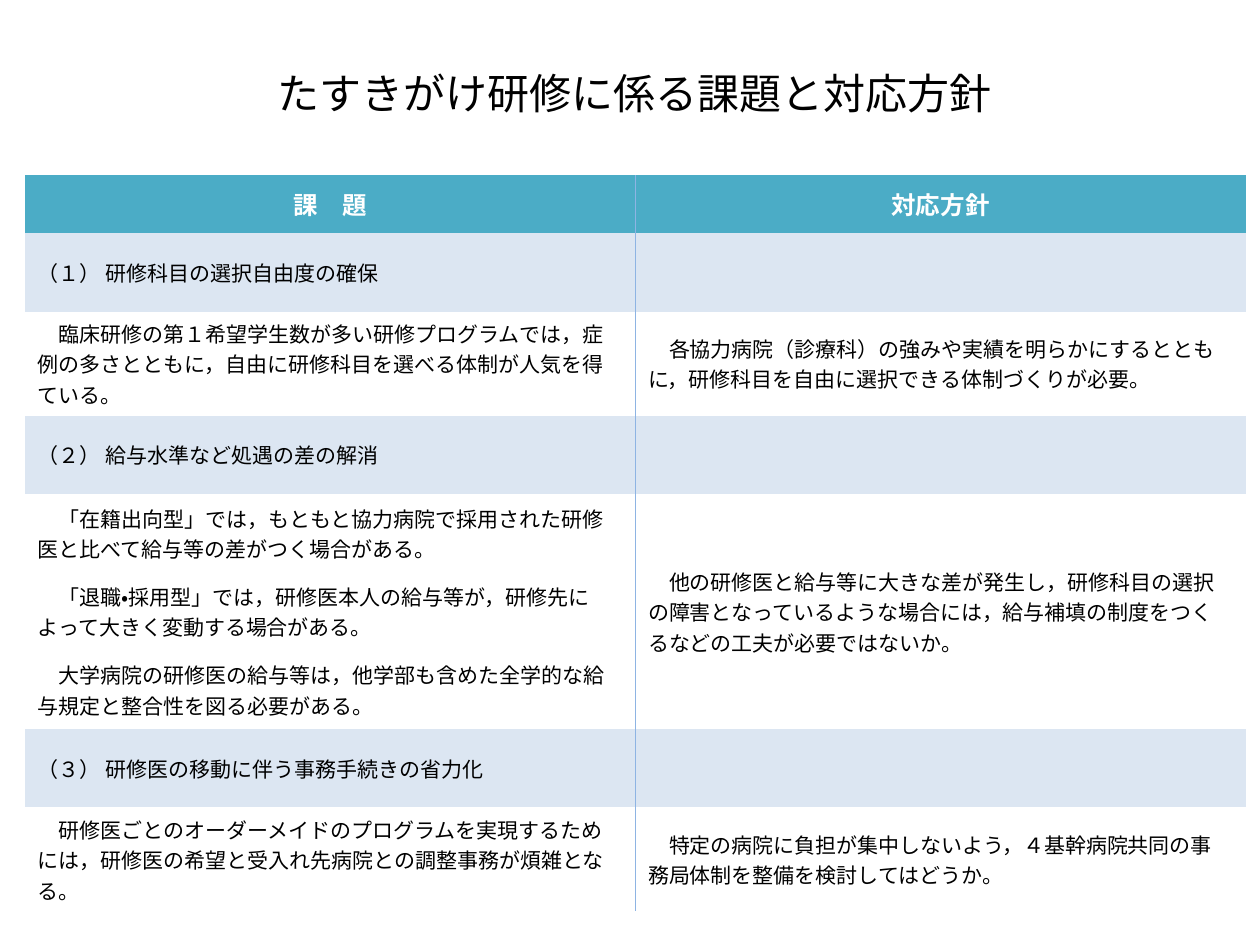
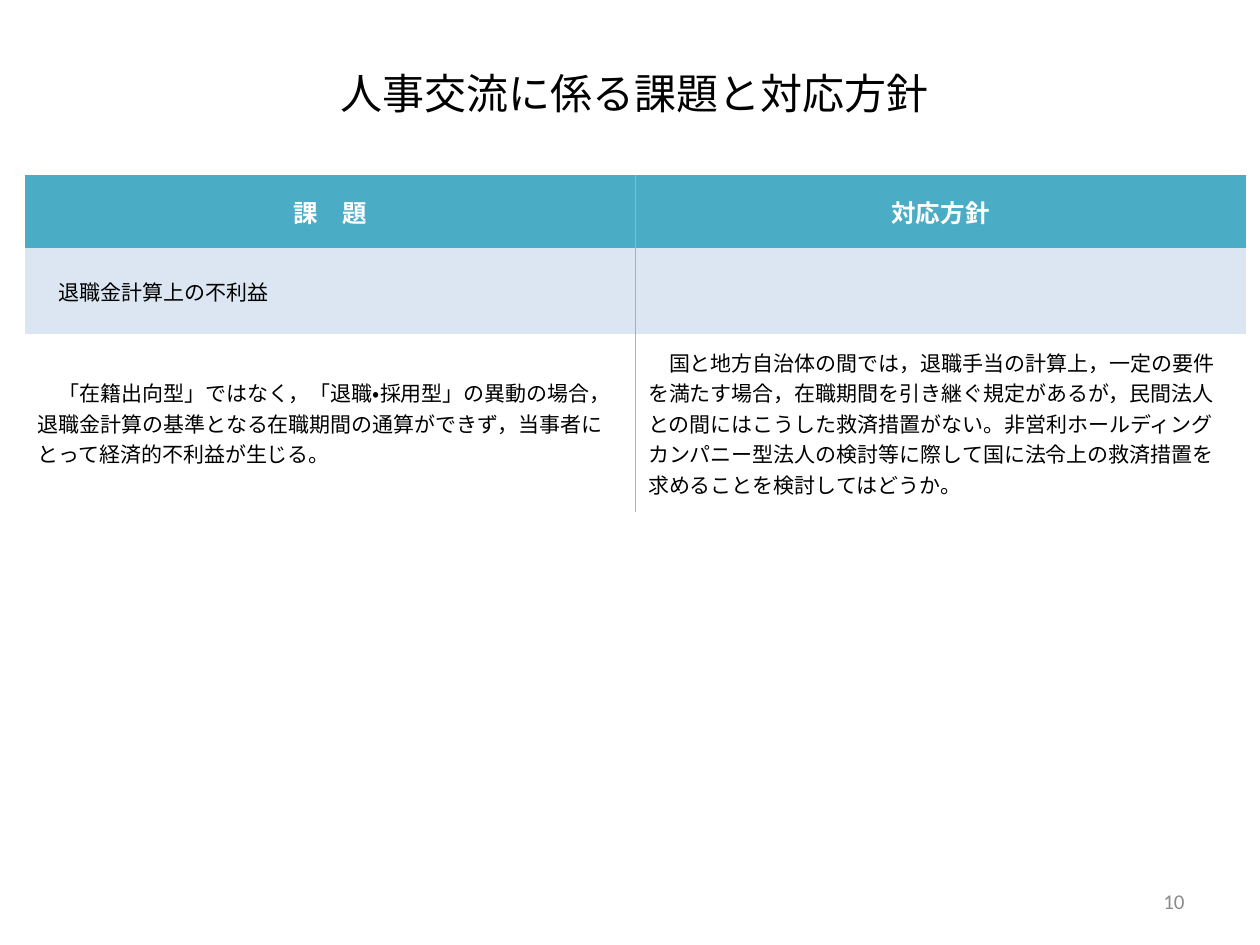
from lxml.etree import SubElement
from pptx import Presentation
from pptx.dml.color import RGBColor
from pptx.enum.lang import MSO_LANGUAGE_ID
from pptx.enum.text import MSO_ANCHOR, PP_ALIGN
from pptx.oxml import parse_xml
from pptx.oxml.ns import qn
from pptx.util import Cm, Pt

WHITE, BLACK, GREY = "FFFFFF", "000000", "8C8C8C"
HEADER_FILL, TOPIC_FILL, DIVIDER = "4BACC6", "DCE6F2", "8EB4E3"
PLAIN_TABLE_STYLE = "{2D5ABB26-0587-4C30-8999-92F81FD0307C}"
DRAWING = "http://schemas.openxmlformats.org/drawingml/2006/main"
HEADINGS = ("課　題", "対応方針")

TRAINING_ROWS = [
    ("（１） 研修科目の選択自由度の確保", ""),
    ("　臨床研修の第１希望学生数が多い研修プログラムでは，症例の多さとともに，自由に研修科目を選べる体制が人気を得ている。",
     "　各協力病院（診療科）の強みや実績を明らかにするとともに，研修科目を自由に選択できる体制づくりが必要。"),
    ("（２） 給与水準など処遇の差の解消", ""),
    ("　「在籍出向型」では，もともと協力病院で採用された研修医と比べて給与等の差がつく場合がある。",
     "　他の研修医と給与等に大きな差が発生し，研修科目の選択の障害となっているような場合には，給与補填の制度をつくるなどの工夫が必要ではないか。"),
    ("　「退職・採用型」では，研修医本人の給与等が，研修先によって大きく変動する場合がある。", None),
    ("　大学病院の研修医の給与等は，他学部も含めた全学的な給与規定と整合性を図る必要がある。", None),
    ("（３） 研修医の移動に伴う事務手続きの省力化", ""),
    ("　研修医ごとのオーダーメイドのプログラムを実現するためには，研修医の希望と受入れ先病院との調整事務が煩雑となる。",
     "　特定の病院に負担が集中しないよう，４基幹病院共同の事務局体制を整備を検討してはどうか。"),
]
EXCHANGE_ROWS = [
    ("　退職金計算上の不利益", ""),
    ("　「在籍出向型」ではなく，「退職・採用型」の異動の場合，退職金計算の基準となる在職期間の通算ができず，当事者にとって経済的不利益が生じる。",
     "　国と地方自治体の間では，退職手当の計算上，一定の要件を満たす場合，在職期間を引き継ぐ規定があるが，民間法人との間にはこうした救済措置がない。"
     "非営利ホールディングカンパニー型法人の検討等に際して国に法令上の救済措置を求めることを検討してはどうか。"),
]


def colour(code):
    return RGBColor.from_string(code)


def write(frame, text, size, font="Arial", code=BLACK, bold=False, align=PP_ALIGN.LEFT):
    para = frame.paragraphs[0]
    para.text = text
    para.alignment = align
    para.font.name = font
    para.font.size = Pt(size)
    para.font.bold = bold
    para.font.color.rgb = colour(code)
    para.font.language_id = MSO_LANGUAGE_ID.JAPANESE


def add_text(page, left, top, width, height, text, size, **style):
    box = page.shapes.add_textbox(Cm(left), Cm(top), Cm(width), Cm(height))
    box.text_frame.word_wrap = True
    box.text_frame.vertical_anchor = MSO_ANCHOR.MIDDLE
    write(box.text_frame, text, size, **style)


def add_title(page, text):
    add_text(page, 0.79, 0.71, 24, 2.31, text, 24, align=PP_ALIGN.CENTER)


def add_page_number(page, number):
    add_text(page, 18.21, 17.65, 5.92, 1.02, number, 12,
             font="Calibri", code=GREY, align=PP_ALIGN.RIGHT)


def draw_divider(cell, side):
    line = parse_xml(f'<a:{side} xmlns:a="{DRAWING}" w="6350"><a:solidFill>'
                     f'<a:srgbClr val="{DIVIDER}"/></a:solidFill></a:{side}>')
    cell._tc.get_or_add_tcPr().insert(0, line)


def fill_cell(cell, text, fill, side, **style):
    cell.fill.solid()
    cell.fill.fore_color.rgb = colour(fill)
    cell.vertical_anchor = MSO_ANCHOR.MIDDLE
    draw_divider(cell, side)
    if text:
        write(cell.text_frame, text, **style)


def add_issue_table(page, rows, heights):
    frame = page.shapes.add_table(len(rows) + 1, 2, Cm(0.51), Cm(3.53), Cm(24.6), Cm(sum(heights)))
    table = frame.table
    properties = table._tbl.tblPr
    for style_id in properties.findall(qn("a:tableStyleId")):
        properties.remove(style_id)
    SubElement(properties, qn("a:tableStyleId")).text = PLAIN_TABLE_STYLE
    table.horz_banding = False
    for row, height in zip(table.rows, heights):
        row.height = Cm(height)
    for column, (heading, side) in enumerate(zip(HEADINGS, ("lnR", "lnL"))):
        table.columns[column].width = Cm(12.3)
        fill_cell(table.cell(0, column), heading, HEADER_FILL, side, size=14,
                  font="Calibri", code=WHITE, bold=True, align=PP_ALIGN.CENTER)
        for index, texts in enumerate(rows, start=1):
            fill = TOPIC_FILL if texts[1] == "" else WHITE
            fill_cell(table.cell(index, column), texts[column], fill, side, size=12)
    merge_shared_answers(table, rows)


def merge_shared_answers(table, rows):
    answered = 0
    for index, (_, answer) in enumerate(rows, start=1):
        if answer is not None:
            answered = index
        elif index == len(rows) or rows[index][1] is not None:
            table.cell(answered, 1).merge(table.cell(index, 1))


def add_issue_page(deck, title, rows, heights):
    page = deck.slides.add_slide(deck.slide_layouts[6])
    add_issue_table(page, rows, heights)
    add_title(page, title)
    return page


def main():
    deck = Presentation()
    deck.slide_width, deck.slide_height = Cm(25.4), Cm(19.05)
    add_issue_page(deck, "たすきがけ研修に係る課題と対応方針", TRAINING_ROWS,
                   [1.17] + [1.58] * len(TRAINING_ROWS))
    exchange = add_issue_page(deck, "人事交流に係る課題と対応方針", EXCHANGE_ROWS, [1.47, 1.73, 3.6])
    add_page_number(exchange, "10")
    deck.save("out.pptx")


if __name__ == "__main__":
    main()
